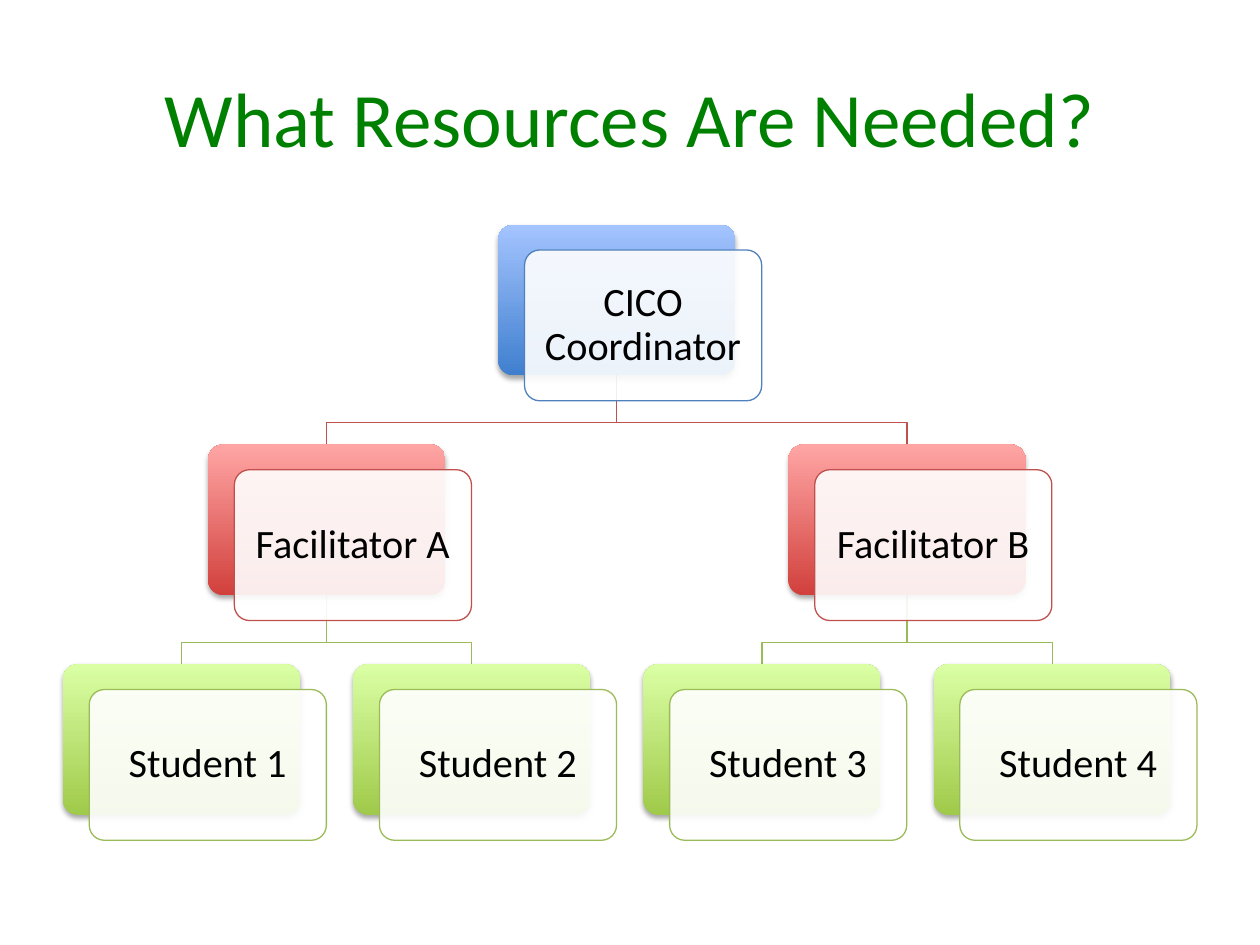
"""Build the resources slide: a three-level organisation chart of layered cards."""
from lxml.etree import SubElement
from pptx import Presentation
from pptx.dml.color import RGBColor
from pptx.enum.shapes import MSO_SHAPE
from pptx.enum.text import MSO_ANCHOR, PP_ALIGN
from pptx.oxml.ns import qn
from pptx.util import Cm, Pt

TITLE = "What Resources Are Needed?"
FONT = "Calibri"
COLORS = {"title": "008000", "text": "000000", "card": "FFFFFF", "shadow": "000000"}
LEVELS = [
    {"line": "4F81BD", "bottom": "3F7FCE", "top": "A4C4FF"},
    {"line": "C0504D", "bottom": "D1403C", "top": "FFA6A5"},
    {"line": "9BBB59", "bottom": "A0CA4A", "top": "DAFFA5"},
]
ROLES = [
    ("CICO Coordinator", 0, 1.5, None),
    ("Facilitator A", 1, 0.5, "CICO Coordinator"),
    ("Student 1", 2, 0, "Facilitator A"),
    ("Student 2", 2, 1, "Facilitator A"),
    ("Facilitator B", 1, 2.5, "CICO Coordinator"),
    ("Student 3", 2, 2, "Facilitator B"),
    ("Student 4", 2, 3, "Facilitator B"),
]
LEFT, TOP = Cm(1.27), Cm(4.53)
COLUMN_STEP, ROW_STEP = Cm(5.85), Cm(4.43)
WIDTH, HEIGHT = Cm(4.78), Cm(3.04)
SHIFT_X, SHIFT_Y = Cm(0.53), Cm(0.51)
BRANCH_RISE = Cm(0.44)


def rgb(value):
    return RGBColor.from_string(value)


def position(level, column):
    return int(LEFT + column * COLUMN_STEP), int(TOP + level * ROW_STEP)


def outline(shape, color):
    shape.line.color.rgb = rgb(color)
    shape.line.width = Pt(0.75)


def add_branch(shapes, parent, child, color):
    (parent_x, parent_y), (child_x, child_y) = parent, child
    start, end = parent_x + WIDTH // 2, child_x + WIDTH // 2
    bend = child_y - BRANCH_RISE
    builder = shapes.build_freeform(start, parent_y + HEIGHT)
    builder.add_line_segments([(start, bend), (end, bend), (end, child_y)], close=False)
    branch = builder.convert_to_shape()
    branch.shadow.inherit = False
    branch.fill.background()
    outline(branch, color)


def add_rounded(shapes, x, y):
    rounded = shapes.add_shape(MSO_SHAPE.ROUNDED_RECTANGLE, x, y, WIDTH, HEIGHT)
    rounded.adjustments[0] = 0.1
    rounded.shadow.inherit = False
    return rounded


def add_backing(shapes, x, y, colors):
    backing = add_rounded(shapes, x, y)
    backing.fill.gradient()
    backing.fill.gradient_angle = 90
    for stop, name in zip(backing.fill.gradient_stops, ("bottom", "top")):
        stop.color.rgb = rgb(colors[name])
    backing.line.fill.background()
    effects = backing.element.spPr.find(qn("a:effectLst"))
    shadow = SubElement(effects, qn("a:outerShdw"), blurRad=str(Pt(3.1)),
                        dist=str(Pt(1.8)), dir="5400000", rotWithShape="0")
    shade = SubElement(shadow, qn("a:srgbClr"), val=COLORS["shadow"])
    SubElement(shade, qn("a:alpha"), val="35000")


def add_card(shapes, x, y, role, color):
    card = add_rounded(shapes, x + SHIFT_X, y + SHIFT_Y)
    card.fill.solid()
    card.fill.fore_color.rgb = rgb(COLORS["card"])
    tint = card.element.spPr.find(qn("a:solidFill")).find(qn("a:srgbClr"))
    SubElement(tint, qn("a:alpha"), val="90000")
    outline(card, color)
    frame = card.text_frame
    frame.word_wrap = True
    frame.vertical_anchor = MSO_ANCHOR.MIDDLE
    frame.margin_left = frame.margin_right = Cm(0.25)
    frame.margin_top = frame.margin_bottom = Cm(0.25)
    write(frame, role, 23, COLORS["text"])
    frame.paragraphs[0].line_spacing = 0.9


def write(frame, text, size, color):
    frame.text = text
    paragraph = frame.paragraphs[0]
    paragraph.alignment = PP_ALIGN.CENTER
    paragraph.font.name = FONT
    paragraph.font.size = Pt(size)
    paragraph.font.color.rgb = rgb(color)


def main():
    presentation = Presentation()
    presentation.slide_width, presentation.slide_height = Cm(25.4), Cm(19.05)
    slide = presentation.slides.add_slide(presentation.slide_layouts[5])
    title = slide.shapes.title
    title.left, title.top, title.width, title.height = Cm(1.27), Cm(0.76), Cm(22.86), Cm(3.18)
    title.text_frame.vertical_anchor = MSO_ANCHOR.MIDDLE
    write(title.text_frame, TITLE, 44, COLORS["title"])

    places = {role: position(level, column) for role, level, column, _ in ROLES}
    for role, level, _, parent in ROLES:
        if parent:
            add_branch(slide.shapes, places[parent], places[role], LEVELS[level]["line"])
    for role, level, _, _ in ROLES:
        add_backing(slide.shapes, *places[role], LEVELS[level])
        add_card(slide.shapes, *places[role], role, LEVELS[level]["line"])
    presentation.save("out.pptx")


if __name__ == "__main__":
    main()
